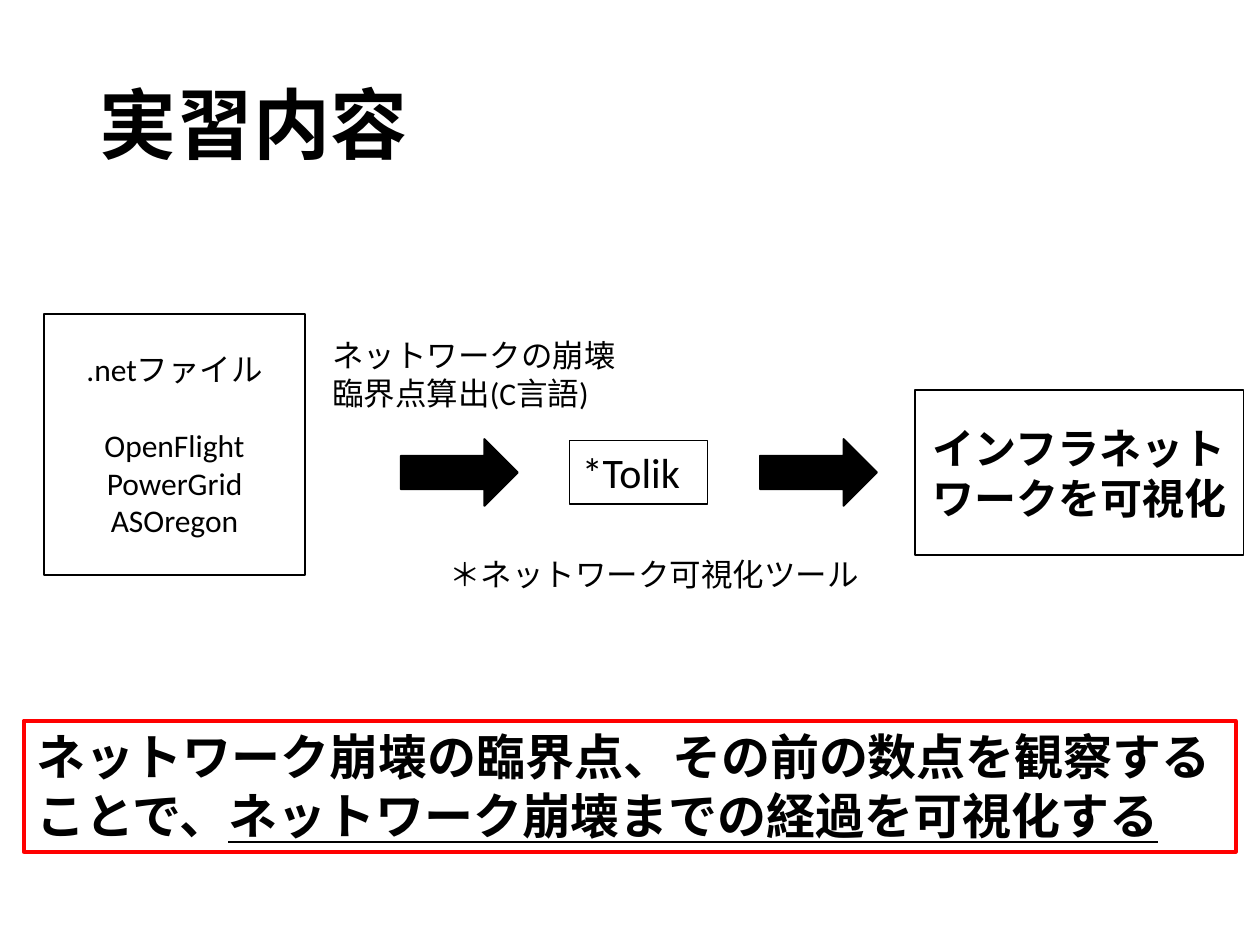
from dataclasses import dataclass

from pptx import Presentation
from pptx.dml.color import RGBColor
from pptx.enum.shapes import MSO_SHAPE
from pptx.enum.text import MSO_ANCHOR, MSO_AUTO_SIZE, PP_ALIGN
from pptx.util import Cm, Pt

RECTANGLE = MSO_SHAPE.RECTANGLE
RIGHT_ARROW = MSO_SHAPE.RIGHT_ARROW
LEFT, CENTER = PP_ALIGN.LEFT, PP_ALIGN.CENTER
TOP, MIDDLE = MSO_ANCHOR.TOP, MSO_ANCHOR.MIDDLE
NO_FIT = MSO_AUTO_SIZE.NONE
GROW = MSO_AUTO_SIZE.SHAPE_TO_FIT_TEXT

COLORS = {"black": "000000", "red": "FF0000"}
TITLE_FONT, BODY_FONT = "Arial", "Calibri"
TITLE_ONLY_LAYOUT = 5


@dataclass
class Box:
    """A text block in centimetres; without a line colour it is a plain label."""
    left: float
    top: float
    width: float
    height: float
    paragraphs: list[list[str]]
    size: int
    line_color: str | None = None
    line_width: float = 1
    bold: bool = False
    centered: bool = False
    wrap: bool = True


@dataclass
class Arrow:
    left: float
    top: float
    width: float = 2.36
    height: float = 1.35


def color(name: str) -> RGBColor:
    return RGBColor.from_string(COLORS[name])


def format_run(run, font: str, size: int, bold: bool) -> None:
    run.font.name = font
    run.font.size = Pt(size)
    run.font.bold = bold
    run.font.color.rgb = color("black")


def draw_title(slide, text: str) -> None:
    title = slide.shapes.title
    title.left, title.top = Cm(1.75), Cm(0.76)
    title.width, title.height = Cm(21.9), Cm(3.68)
    frame = title.text_frame
    frame.text = text
    frame.auto_size = NO_FIT
    frame.vertical_anchor = MIDDLE
    paragraph = frame.paragraphs[0]
    paragraph.alignment = LEFT
    paragraph.line_spacing = 0.9
    format_run(paragraph.runs[0], TITLE_FONT, 44, True)


def draw_box(slide, box: Box):
    place = [Cm(value) for value in (box.left, box.top, box.width, box.height)]
    if box.line_color:
        shape = slide.shapes.add_shape(RECTANGLE, *place)
        shape.shadow.inherit = False
        shape.fill.background()
        shape.line.color.rgb = color(box.line_color)
        shape.line.width = Pt(box.line_width)
    else:
        shape = slide.shapes.add_textbox(*place)

    frame = shape.text_frame
    frame.word_wrap = box.wrap
    frame.auto_size = NO_FIT if box.centered else GROW
    frame.vertical_anchor = MIDDLE if box.centered else TOP
    for index, texts in enumerate(box.paragraphs):
        paragraph = frame.add_paragraph() if index else frame.paragraphs[0]
        paragraph.alignment = CENTER if box.centered else LEFT
        for text in texts:
            run = paragraph.add_run()
            run.text = text
            format_run(run, BODY_FONT, box.size, box.bold)
    return shape


def draw_arrow(slide, arrow: Arrow) -> None:
    shape = slide.shapes.add_shape(
        RIGHT_ARROW, Cm(arrow.left), Cm(arrow.top), Cm(arrow.width), Cm(arrow.height))
    shape.shadow.inherit = False
    shape.fill.solid()
    shape.fill.fore_color.rgb = color("black")
    shape.line.color.rgb = color("black")
    shape.line.width = Pt(1)


SOURCE_FILES = Box(
    0.89, 6.33, 5.26, 5.26,
    [[".netファイル"], ["OpenFlight"], ["PowerGrid"], ["ASOregon"]],
    18, "black", centered=True)
OTHER_BOXES = [
    Box(6.45, 6.65, 6.32, 1.8, [["ネットワークの崩壊臨界点算出(C言語)"]], 18),
    Box(11.48, 8.88, 2.79, 1.28, [["*Tolik"]], 24, "black", 0.75, wrap=False),
    Box(18.44, 7.86, 6.63, 3.33, [["インフラネットワークを可視化"]], 24, "black",
        bold=True, centered=True),
    Box(8.81, 11.07, 8.84, 1.02, [["＊ネットワーク可視化ツール"]], 18, wrap=False),
]
CONCLUSION = Box(
    0.48, 14.53, 24.43, 2.64,
    [["ネットワーク崩壊の臨界点、その前の数点を観察することで、",
      "ネットワーク崩壊までの経過を可視化する"]],
    28, "red", 2.25, bold=True)
ARROWS = [Arrow(8.08, 8.85), Arrow(15.32, 8.85)]


def main() -> None:
    presentation = Presentation()
    presentation.slide_width, presentation.slide_height = Cm(25.4), Cm(19.05)
    slide = presentation.slides.add_slide(presentation.slide_layouts[TITLE_ONLY_LAYOUT])
    draw_title(slide, "実習内容")

    # Process flow, from the data files to the visualisation
    files = draw_box(slide, SOURCE_FILES)
    files.text_frame.paragraphs[1].space_before = Pt(22)
    for box in OTHER_BOXES:
        draw_box(slide, box)
    for arrow in ARROWS:
        draw_arrow(slide, arrow)

    # Conclusion, with its second half underlined
    conclusion = draw_box(slide, CONCLUSION)
    conclusion.text_frame.paragraphs[0].runs[1].font.underline = True

    presentation.save("out.pptx")


if __name__ == "__main__":
    main()
